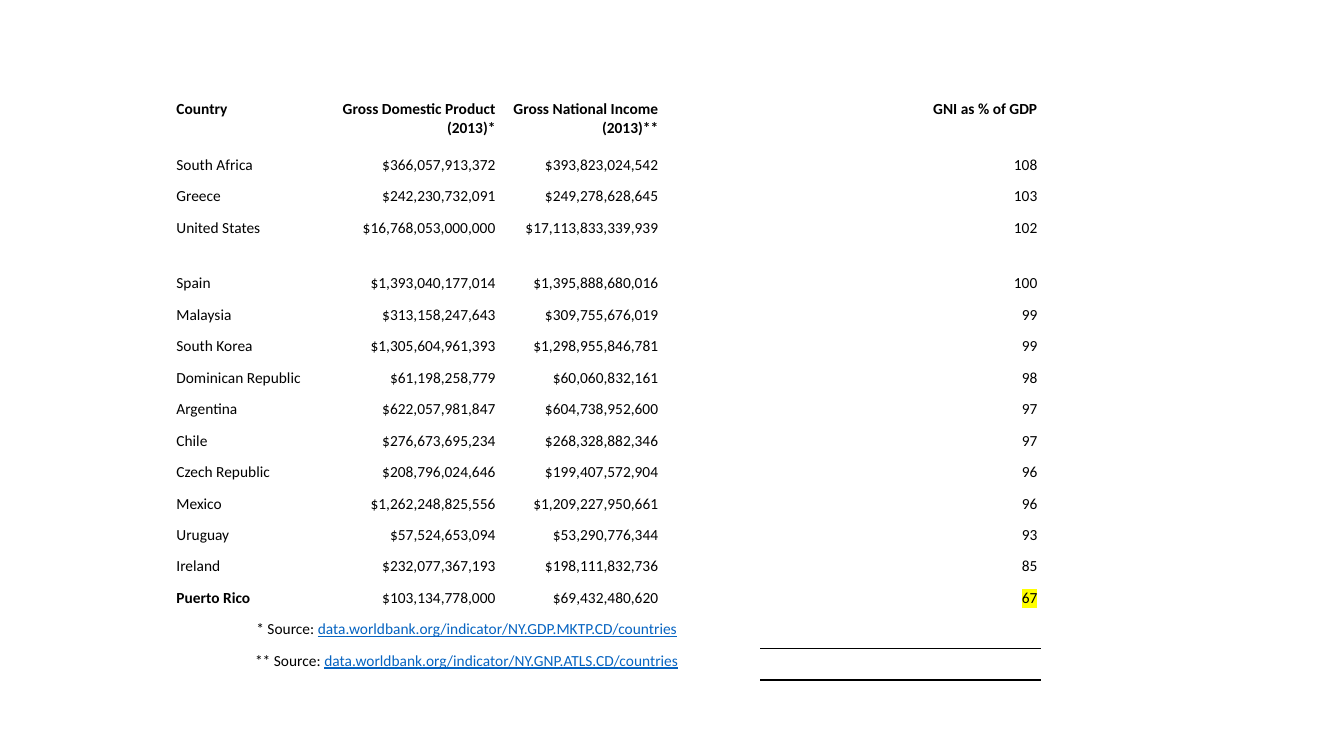
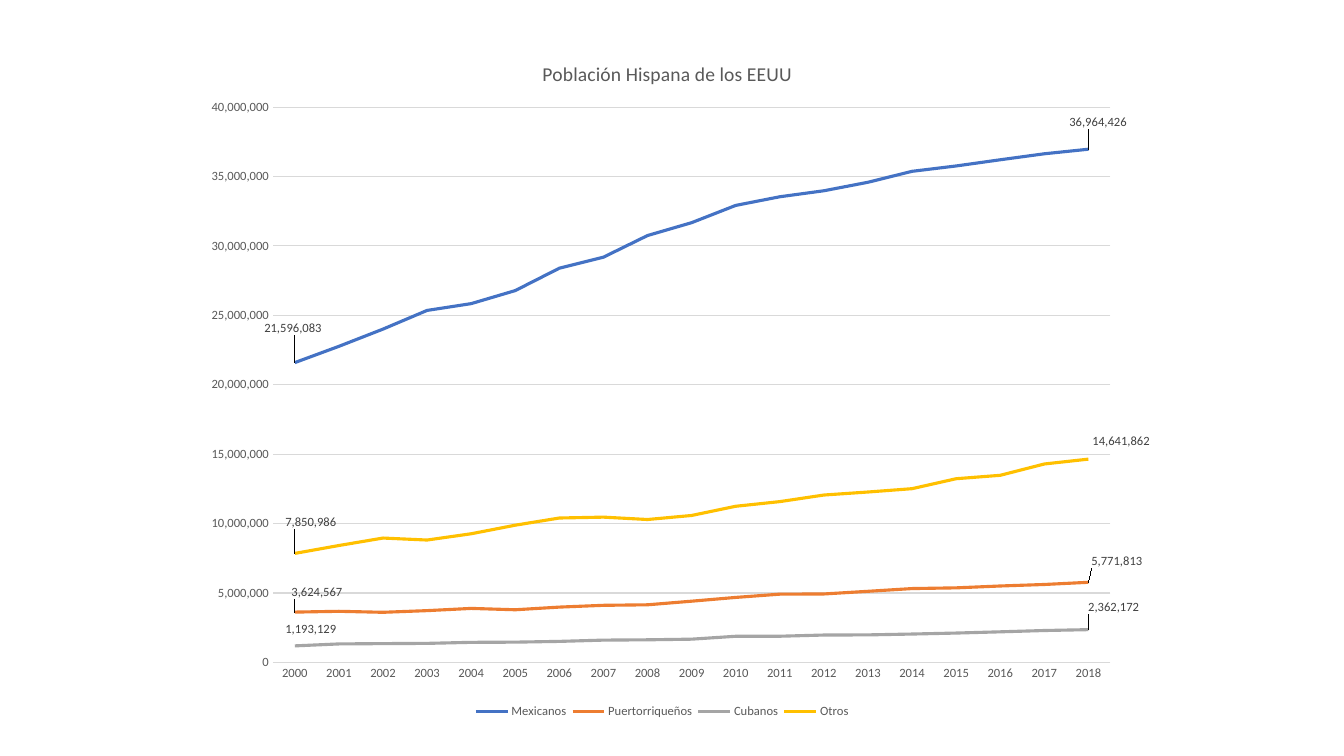
from lxml import etree
from pptx import Presentation
from pptx import util as u
from pptx.chart import data as chart_data
from pptx.dml.color import RGBColor
from pptx.enum import chart as ch, text
from pptx.oxml import ns

PX = 9525
FONT = "Calibri"
BLACK = RGBColor(0x00, 0x00, 0x00)
LINK_BLUE = RGBColor(0x05, 0x63, 0xC1)
LABEL_GREY = RGBColor(0x59, 0x59, 0x59)
VALUE_GREY = RGBColor(0x40, 0x40, 0x40)
RULE_GREY = RGBColor(0xD9, 0xD9, 0xD9)
BLUE = RGBColor(0x44, 0x72, 0xC4)
ORANGE = RGBColor(0xED, 0x7D, 0x31)
GREY = RGBColor(0xA5, 0xA5, 0xA5)
GOLD = RGBColor(0xFF, 0xC0, 0x00)
CHART_W, CHART_H = 911, 661


def style(font, size, color, bold=False):
    font.name = FONT
    font.size = u.Pt(size)
    font.bold = bold
    font.color.rgb = color


def place(part, index, edges, **lengths):
    for old in part.findall(ns.qn("c:layout")):
        part.remove(old)
    layout = etree.Element(ns.qn("c:layout"))
    manual = etree.SubElement(layout, ns.qn("c:manualLayout"))
    for tag, value in edges.items():
        etree.SubElement(manual, ns.qn("c:" + tag), val=value)
    for tag, length in lengths.items():
        whole = CHART_W if tag in "xw" else CHART_H
        etree.SubElement(manual, ns.qn("c:" + tag), val=str(length / whole))
    part.insert(index, layout)


prs = Presentation()
prs.slide_width = 1280 * PX
prs.slide_height = 720 * PX
blank = prs.slide_layouts[6]

header = ("Country", "Gross Domestic Product (2013)*", "Gross National Income (2013)**", "GNI as % of GDP")
countries = [
    ("South Africa", "$366,057,913,372", "$393,823,024,542", "108"),
    ("Greece", "$242,230,732,091", "$249,278,628,645", "103"),
    ("United States", "$16,768,053,000,000", "$17,113,833,339,939", "102"),
    ("Spain", "$1,393,040,177,014", "$1,395,888,680,016", "100"),
    ("Malaysia", "$313,158,247,643", "$309,755,676,019", "99"),
    ("South Korea", "$1,305,604,961,393", "$1,298,955,846,781", "99"),
    ("Dominican Republic", "$61,198,258,779", "$60,060,832,161", "98"),
    ("Argentina", "$622,057,981,847", "$604,738,952,600", "97"),
    ("Chile", "$276,673,695,234", "$268,328,882,346", "97"),
    ("Czech Republic", "$208,796,024,646", "$199,407,572,904", "96"),
    ("Mexico", "$1,262,248,825,556", "$1,209,227,950,661", "96"),
    ("Uruguay", "$57,524,653,094", "$53,290,776,344", "93"),
    ("Ireland", "$232,077,367,193", "$198,111,832,736", "85"),
    ("Puerto Rico", "$103,134,778,000", "$69,432,480,620", "67"),
]
sources = [
    ("* Source: ", "data.worldbank.org/indicator/NY.GDP.MKTP.CD/countries"),
    ("** Source: ", "data.worldbank.org/indicator/NY.GNP.ATLS.CD/countries"),
]
col_widths = [155, 155, 155, 94, 267]
row_heights = [53, 30, 30, 53] + [30] * 13

income_slide = prs.slides.add_slide(blank)
income = income_slide.shapes.add_table(
    len(row_heights), len(col_widths), 165 * PX, 92 * PX,
    sum(col_widths) * PX, sum(row_heights) * PX).table
income.first_row = income.horz_banding = False
income._tbl.tblPr.find(ns.qn("a:tableStyleId")).text = "{2D5ABB26-0587-4C30-8999-92F81FD0307C}"
for column, width in zip(income.columns, col_widths):
    column.width = width * PX
for row, height in zip(income.rows, row_heights):
    row.height = height * PX
for cell in income.iter_cells():
    cell.fill.background()
    cell.margin_left = cell.margin_right = cell.margin_top = cell.margin_bottom = 3 * PX
    style(cell.text_frame.paragraphs[0].font, 11, BLACK)

for r, values in enumerate([header] + countries):
    income.cell(r, 3).merge(income.cell(r, 4))
    for c, value in enumerate(values):
        entry = income.cell(r, c).text_frame.paragraphs[0]
        entry.text = value
        entry.alignment = text.PP_ALIGN.RIGHT if c else text.PP_ALIGN.LEFT
        style(entry.runs[0].font, 11, BLACK, r == 0 or value == "Puerto Rico")

lowest_share = income.cell(len(countries), 3).text_frame.paragraphs[0].runs[0]
highlight = etree.Element(ns.qn("a:highlight"))
etree.SubElement(highlight, ns.qn("a:srgbClr"), val="FFFF00")
lowest_share._r.rPr.find(ns.qn("a:solidFill")).addnext(highlight)

for r, (label, address) in enumerate(sources, len(countries) + 1):
    income.cell(r, 0).merge(income.cell(r, 3))
    note = income.cell(r, 0).text_frame.paragraphs[0]
    note.alignment = text.PP_ALIGN.CENTER
    for words, color in ((label, BLACK), (address, LINK_BLUE)):
        run = note.add_run()
        run.text = words
        style(run.font, 11, color)
        run.font.underline = color == LINK_BLUE
    border = etree.Element(ns.qn("a:lnB"), w=str(u.Pt(1)))
    border_fill = etree.SubElement(border, ns.qn("a:solidFill"))
    etree.SubElement(border_fill, ns.qn("a:srgbClr"), val=str(BLACK))
    income.cell(r, 4)._tc.get_or_add_tcPr().insert(0, border)

groups = [
    ("Mexicanos", BLUE, (-33, -33), (-22, -26),
     [21596083, 22767814, 24007072, 25355205, 25843363, 26784268, 28395997, 29189334, 30746270, 31673700,
      32915983, 33539187, 33972251, 34582182, 35371314, 35757893, 36203500, 36634462, 36964426]),
    ("Puertorriqueños", ORANGE, (-7, -19), (-1, -20),
     [3624567, 3681958, 3611899, 3730405, 3892132, 3794776, 3985058, 4114701, 4150862, 4411604,
      4682531, 4916250, 4929992, 5121921, 5319961, 5371113, 5506037, 5613709, 5771813]),
    ("Cubanos", GREY, (-13, -16), (-4, -21),
     [1193129, 1332858, 1355898, 1372804, 1448684, 1462593, 1517028, 1608835, 1631001, 1677158,
      1883599, 1888772, 1973108, 1985959, 2045970, 2115879, 2204591, 2298418, 2362172]),
    ("Otros", GOLD, (-13, -30), (0, -17),
     [7850986, 8421384, 8957799, 8815631, 9266741, 9884665, 10400892, 10465726, 10294343, 10585682,
      11247457, 11582949, 12057132, 12274173, 12513272, 13231892, 13475623, 14291272, 14641862]),
]
figures = chart_data.CategoryChartData(number_format="#,##0")
figures.categories = [str(year) for year in range(2000, 2019)]
for name, color, first, last, values in groups:
    figures.add_series(name, values)

population_slide = prs.slides.add_slide(blank)
population = population_slide.shapes.add_chart(
    ch.XL_CHART_TYPE.LINE, 184 * PX, 30 * PX, CHART_W * PX, CHART_H * PX, figures).chart
style(population.font, 10, BLACK)

population.has_title = True
heading = population.chart_title.text_frame
heading.text = "Población Hispana de los EEUU"
style(heading.paragraphs[0].runs[0].font, 14, LABEL_GREY)
population.has_legend = True
population.legend.position = ch.XL_LEGEND_POSITION.BOTTOM
population.legend.include_in_layout = False
style(population.legend.font, 9, LABEL_GREY)

from_edge = {"xMode": "edge", "yMode": "edge"}
place(population.chart_title._element, 1, from_edge, x=330, y=24)
place(population.legend._element, 1, from_edge, x=264, y=634, w=368, h=28)
plot_area = population._chartSpace.chart.plotArea
place(plot_area, 0, {"layoutTarget": "inner", **from_edge}, x=76, y=72, w=800, h=529)

years, people = population.category_axis, population.value_axis
for axis in (years, people):
    axis.major_tick_mark = axis.minor_tick_mark = ch.XL_TICK_MARK.NONE
    style(axis.tick_labels.font, 9, LABEL_GREY)
people.minimum_scale = 0
people.maximum_scale = 40000000
people.major_unit = 5000000
people.tick_labels.number_format = "#,##0"
people.tick_labels.number_format_is_linked = False
people.has_major_gridlines = True
people.format.line.fill.background()
for rule in (years.format.line, people.major_gridlines.format.line):
    rule.color.rgb = RULE_GREY
    rule.width = u.Pt(0.75)

C15 = "http://schemas.northwick.com/office/drawing/2012/chart"
population.plots[0].vary_by_categories = False
for series, (name, color, first, last, values) in zip(population.plots[0].series, groups):
    series.smooth = False
    series.marker.style = ch.XL_MARKER_STYLE.NONE
    series.format.line.color.rgb = color
    series.format.line.width = u.Pt(2.25)
    labels = series.data_labels
    labels.show_value = False
    for index in (0, len(values) - 1):
        label = series.points[index].data_label
        style(label.font, 9, VALUE_GREY)
        label.position = ch.XL_LABEL_POSITION.RIGHT
    for label_xml, (dx, dy) in zip(labels._element.findall(ns.qn("c:dLbl")), (first, last)):
        place(label_xml, 1, {}, x=dx, y=dy)
    extensions = etree.SubElement(labels._element, ns.qn("c:extLst"))
    extension = etree.SubElement(extensions, ns.qn("c:ext"), nsmap={"c15": C15},
                                 uri="{CE6537A1-D6FC-4f65-9D91-7224C49458BB}")
    etree.SubElement(extension, "{%s}showLeaderLines" % C15, val="1")

prs.save("out.pptx")
